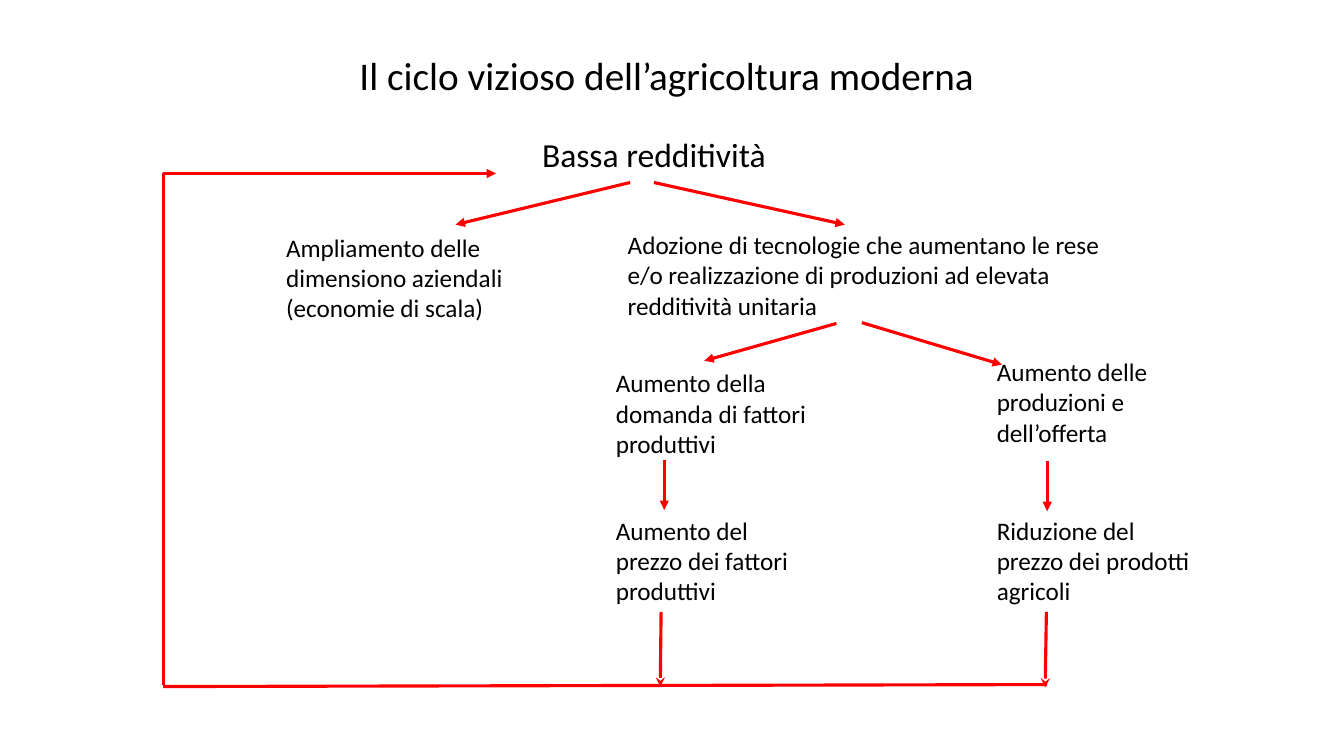
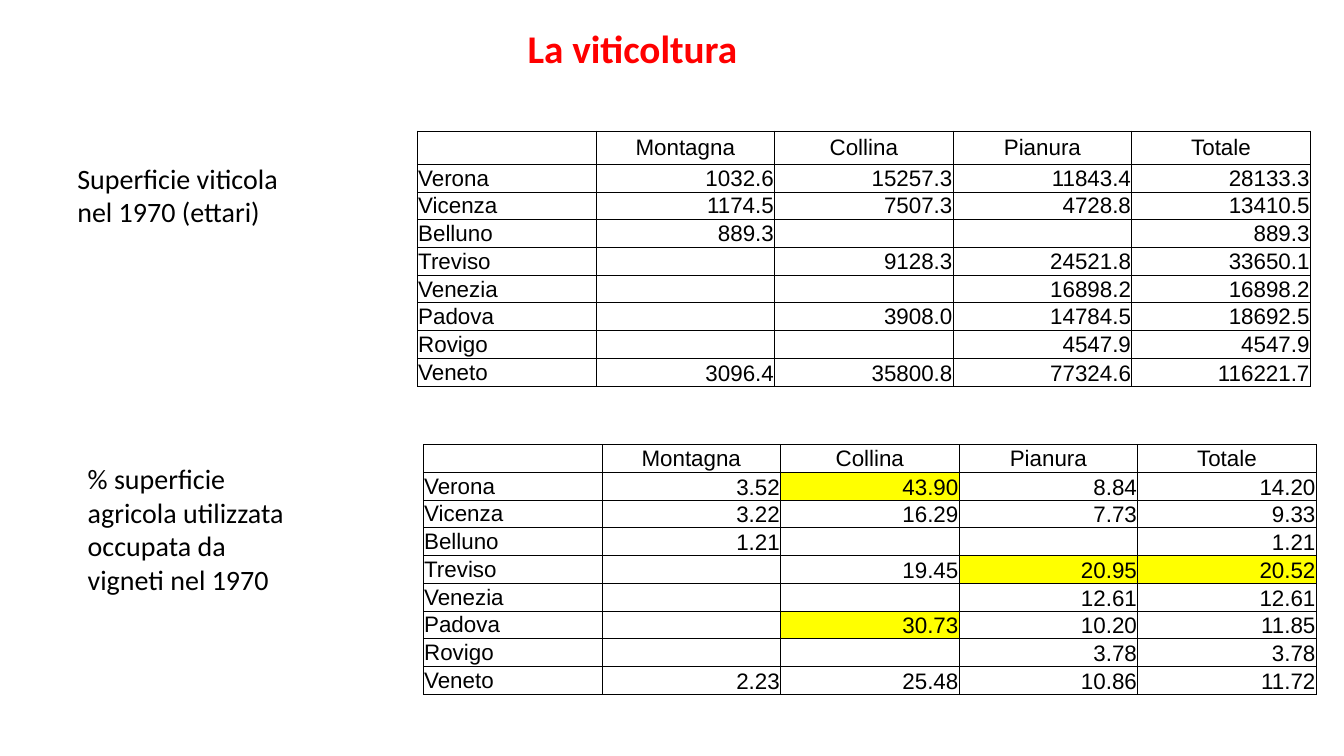
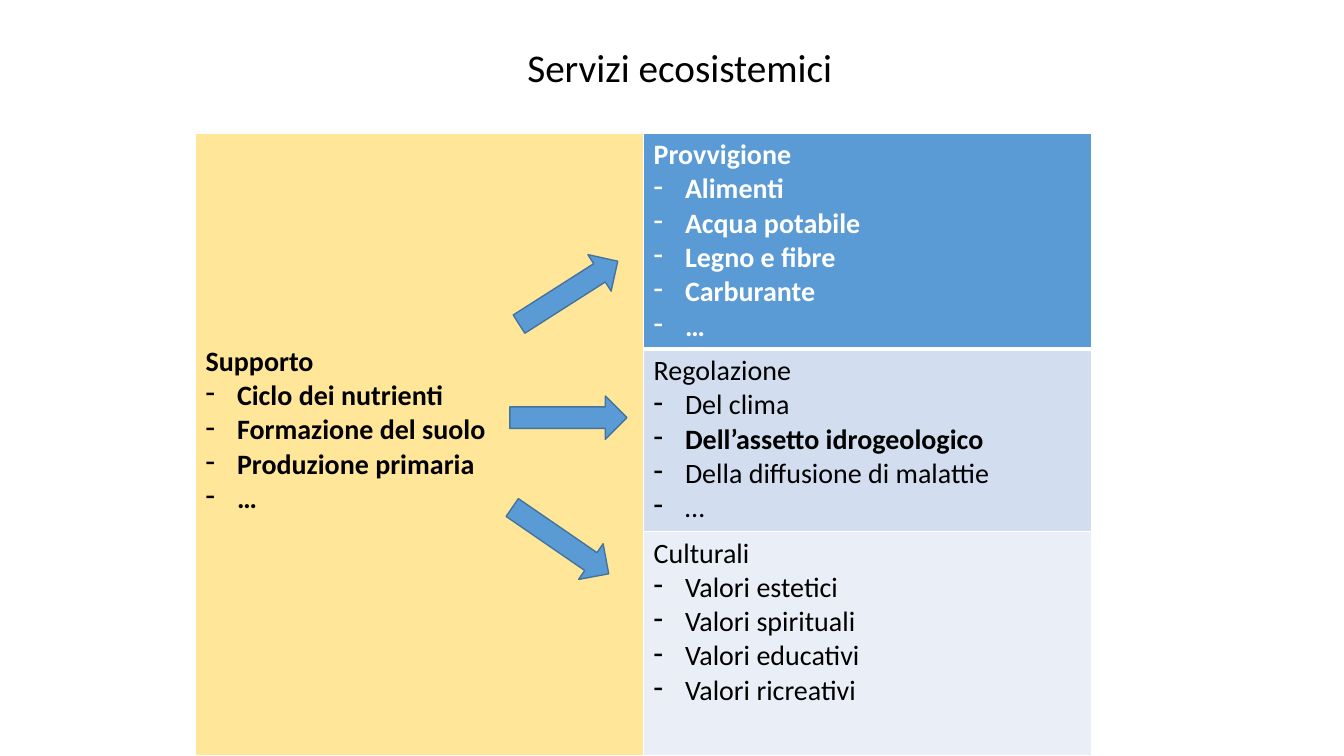
from lxml import etree
from pptx import Presentation
from pptx.dml.color import RGBColor
from pptx.enum.shapes import MSO_CONNECTOR, MSO_SHAPE
from pptx.enum.text import MSO_ANCHOR as Anchor, PP_ALIGN as Align
from pptx.oxml.ns import qn
from pptx.util import Cm, Pt

COLOURS = {"black": "000000", "white": "FFFFFF", "red": "FF0000",
           "yellow": "FFFF00", "blue": "5B9BD5", "edge": "43739E",
           "cream": "FFE699", "pale": "D2DEEF", "paler": "EAEFF7"}
BODY, FIGURES = "Calibri", "Arial"

# Slide 1: text, left, top, width, height, size; lengths in cm
CYCLE_STEPS = [
    ("Bassa redditività", 13.41, 3.25, 6.5, 1.27, 24),
    ("Adozione di tecnologie che aumentano le rese e/o realizzazione di "
     "produzioni ad elevata redditività unitaria", 15.57, 5.66, 13.34, 2.57, 18),
    ("Aumento delle produzioni e dell’offerta", 24.87, 8.86, 5.64, 2.57, 18),
    ("Aumento della domanda di fattori produttivi", 15.27, 9.14, 6.17, 2.57, 18),
    ("Aumento del prezzo dei fattori produttivi", 15.27, 12.85, 4.98, 2.57, 18),
    ("Riduzione del prezzo dei prodotti agricoli", 24.87, 12.85, 5.64, 2.57, 18),
    ("Ampliamento delle dimensiono aziendali (economie di scala)",
     6.96, 5.72, 6.76, 2.57, 18),
]
# From x, y to x, y, arrowhead
CYCLE_LINES = [
    (15.88, 4.6, 11.48, 5.66, "triangle"),
    (16.48, 4.6, 21.29, 5.66, "triangle"),
    (21.08, 8.15, 17.75, 9.09, "triangle"),
    (21.72, 8.13, 25.25, 9.19, "triangle"),
    (16.74, 11.58, 16.74, 12.85, "triangle"),
    (26.39, 11.61, 26.39, 12.88, "triangle"),
    (26.39, 17.25, 4.11, 17.3, None),
    (4.11, 17.25, 4.11, 4.37, None),
    (4.11, 4.37, 12.5, 4.37, "triangle"),
    (16.66, 15.42, 16.64, 17.3, "stealth"),
    (26.37, 15.42, 26.34, 17.32, "stealth"),
]

# Slide 2
ZONES = ["", "Montagna", "Collina", "Pianura", "Totale"]
VINEYARD_TABLES = [
    {"caption": "Superficie viticola nel 1970 (ettari)",
     "caption_at": (1.7, 3.94, 6.27, 1.96),
     "at": (10.52, 3.3), "heights": [0.84] + [0.66] * 6 + [0.71, 0.66],
     "low_rows": [8], "marked": [],
     "rows": [
         ["Verona", "1032.6", "15257.3", "11843.4", "28133.3"],
         ["Vicenza", "1174.5", "7507.3", "4728.8", "13410.5"],
         ["Belluno", "889.3", "", "", "889.3"],
         ["Treviso", "", "9128.3", "24521.8", "33650.1"],
         ["Venezia", "", "", "16898.2", "16898.2"],
         ["Padova", "", "3908.0", "14784.5", "18692.5"],
         ["Rovigo", "", "", "4547.9", "4547.9"],
         ["Veneto", "3096.4", "35800.8", "77324.6", "116221.7"]]},
    {"caption": "% superficie agricola utilizzata occupata da vigneti nel 1970",
     "caption_at": (1.96, 11.51, 6.05, 3.68),
     "at": (10.67, 11.2), "heights": [0.7] * 9,
     "low_rows": range(1, 9), "marked": ["43.90", "20.95", "20.52", "30.73"],
     "rows": [
         ["Verona", "3.52", "43.90", "8.84", "14.20"],
         ["Vicenza", "3.22", "16.29", "7.73", "9.33"],
         ["Belluno", "1.21", "", "", "1.21"],
         ["Treviso", "", "19.45", "20.95", "20.52"],
         ["Venezia", "", "", "12.61", "12.61"],
         ["Padova", "", "30.73", "10.20", "11.85"],
         ["Rovigo", "", "", "3.78", "3.78"],
         ["Veneto", "2.23", "25.48", "10.86", "11.72"]]},
]

# Slide 3: heading, items, bold lines, text colour, fill
SUPPORT = ["Supporto", "Ciclo dei nutrienti", "Formazione del suolo",
           "Produzione primaria", "…"]
PROVISION = ["Provvigione", "Alimenti", "Acqua potabile", "Legno e fibre",
             "Carburante", "…"]
REGULATION = ["Regolazione", "Del clima", "Dell’assetto idrogeologico",
              "Della diffusione di malattie", "…"]
CULTURE = ["Culturali", "Valori estetici", "Valori spirituali",
           "Valori educativi", "Valori ricreativi"]
SERVICES = [  # row, column, lines, bold lines, text colour, fill
    (0, 0, SUPPORT, SUPPORT, "black", "cream"),
    (0, 1, PROVISION, PROVISION, "white", "blue"),
    (1, 1, REGULATION, REGULATION[2:3], "black", "pale"),
    (2, 1, CULTURE, [], "black", "paler"),
]
SERVICE_HEIGHTS = [5.44, 4.6, 5.66]
SERVICE_ARROWS = [(12.85, 6.83, -32.5), (12.85, 9.98, 0), (12.65, 13.08, 34.5)]


def rgb(name):
    return RGBColor.from_string(COLOURS[name])


def style(para, size, colour="black", bold=False, font=BODY, align=Align.LEFT):
    para.alignment = align
    para.font.name, para.font.size, para.font.bold = font, Pt(size), bold
    para.font.color.rgb = rgb(colour)


def add_text(page, text, left, top, width, height, size, **look):
    box = page.shapes.add_textbox(Cm(left), Cm(top), Cm(width), Cm(height))
    box.text_frame.word_wrap = True
    para = box.text_frame.paragraphs[0]
    para.text = text
    style(para, size, **look)


def add_page(deck, title, left, top, width, **look):
    page = deck.slides.add_slide(deck.slide_layouts[6])
    add_text(page, title, left, top, width, 1.45, 28, align=Align.CENTER, **look)
    return page


def add_line(page, x1, y1, x2, y2, head):
    line = page.shapes.add_connector(MSO_CONNECTOR.STRAIGHT,
                                     Cm(x1), Cm(y1), Cm(x2), Cm(y2))
    line.line.color.rgb = rgb("red")
    line.line.width = Pt(2.25)
    if head:
        etree.SubElement(line.line._get_or_add_ln(), qn("a:tailEnd"), type=head)
    etree.SubElement(line._element.spPr, qn("a:effectLst"))


def add_grid(page, left, top, widths, heights):
    table = page.shapes.add_table(len(heights), len(widths), Cm(left), Cm(top),
                                  Cm(sum(widths)), Cm(sum(heights))).table
    table.first_row = table.horz_banding = False
    for column, width in zip(table.columns, widths):
        column.width = Cm(width)
    for row, height in zip(table.rows, heights):
        row.height = Cm(height)
    return table


def paint_cell(cell, fill, border, **widths):
    """Fill a cell and draw its borders; widths are points per side L, R, T, B."""
    cell.fill.solid()
    cell.fill.fore_color.rgb = rgb(fill)
    for place, side in enumerate("LRTB"):
        edge = etree.Element(qn("a:ln" + side), w=str(Pt(widths.get(side, 1))))
        solid = etree.SubElement(edge, qn("a:solidFill"))
        etree.SubElement(solid, qn("a:srgbClr"), val=COLOURS[border])
        cell._tc.get_or_add_tcPr().insert(place, edge)


def add_dash(para):
    props = para._p.get_or_add_pPr()
    props.set("marL", str(Cm(0.79)))
    props.set("indent", str(Cm(-0.79)))
    etree.SubElement(props, qn("a:buFontTx"))
    etree.SubElement(props, qn("a:buChar"), char="-")


def build_cycle(deck):
    page = add_page(deck, "Il ciclo vizioso dell’agricoltura moderna",
                    2.31, 1.17, 28.98)
    for step in CYCLE_STEPS:
        add_text(page, *step)
    for line in CYCLE_LINES:
        add_line(page, *line)


def build_vineyards(deck):
    page = add_page(deck, "La viticoltura", 1.7, 0.48, 28.47,
                    colour="red", bold=True)
    for data in VINEYARD_TABLES:
        add_text(page, data["caption"], *data["caption_at"], 20)
        table = add_grid(page, *data["at"], [4.5] * len(ZONES), data["heights"])
        for r, values in enumerate([ZONES] + data["rows"]):
            for c, value in enumerate(values):
                cell = table.cell(r, c)
                cell.margin_left = cell.margin_right = cell.margin_top = Cm(0.02)
                cell.margin_bottom = 0
                low = c > 0 and r in data["low_rows"]
                cell.vertical_anchor = Anchor.BOTTOM if low else Anchor.MIDDLE
                para = cell.text_frame.paragraphs[0]
                if value:
                    para.text = value
                else:  # keeps an empty cell as low as its row
                    etree.SubElement(para._p, qn("a:endParaRPr"), sz="1600")
                align = (Align.CENTER if r == 0 else
                         Align.RIGHT if c else Align.LEFT)
                style(para, 16, font=FIGURES, align=align)
                marked = value in data["marked"]
                paint_cell(cell, "yellow" if marked else "white", "black",
                           L=0.5, R=0.5, T=0.5, B=0.5)


def build_services(deck):
    page = add_page(deck, "Servizi ecosistemici", 2.92, 0.97, 28.42)
    table = add_grid(page, 4.93, 3.35, [11.29] * 2, SERVICE_HEIGHTS)
    support = table.cell(0, 0)
    support.merge(table.cell(2, 0))
    support.vertical_anchor = Anchor.MIDDLE
    support.margin_bottom = Cm(0.84)
    for r, c, lines, bold_lines, colour, fill in SERVICES:
        cell = table.cell(r, c)
        frame = cell.text_frame
        for n, text in enumerate(lines):
            para = frame.add_paragraph() if n else frame.paragraphs[0]
            para.text = text
            if n:
                add_dash(para)
            style(para, 20, colour, text in bold_lines)
        # A thicker rule under the first row on the right
        paint_cell(cell, fill, "white", T=3 if r == 1 else 1,
                   B=3 if (r, c) == (0, 1) else 1)
    for left, top, angle in SERVICE_ARROWS:
        arrow = page.shapes.add_shape(MSO_SHAPE.RIGHT_ARROW, Cm(left), Cm(top),
                                      Cm(2.95), Cm(1.09))
        arrow.rotation = angle
        arrow.shadow.inherit = False
        arrow.fill.solid()
        arrow.fill.fore_color.rgb = rgb("blue")
        arrow.line.color.rgb = rgb("edge")
        arrow.line.width = Pt(1)


def main():
    deck = Presentation()
    deck.slide_width, deck.slide_height = Cm(33.87), Cm(19.05)
    for build in (build_cycle, build_vineyards, build_services):
        build(deck)
    deck.save("out.pptx")


if __name__ == "__main__":
    main()
